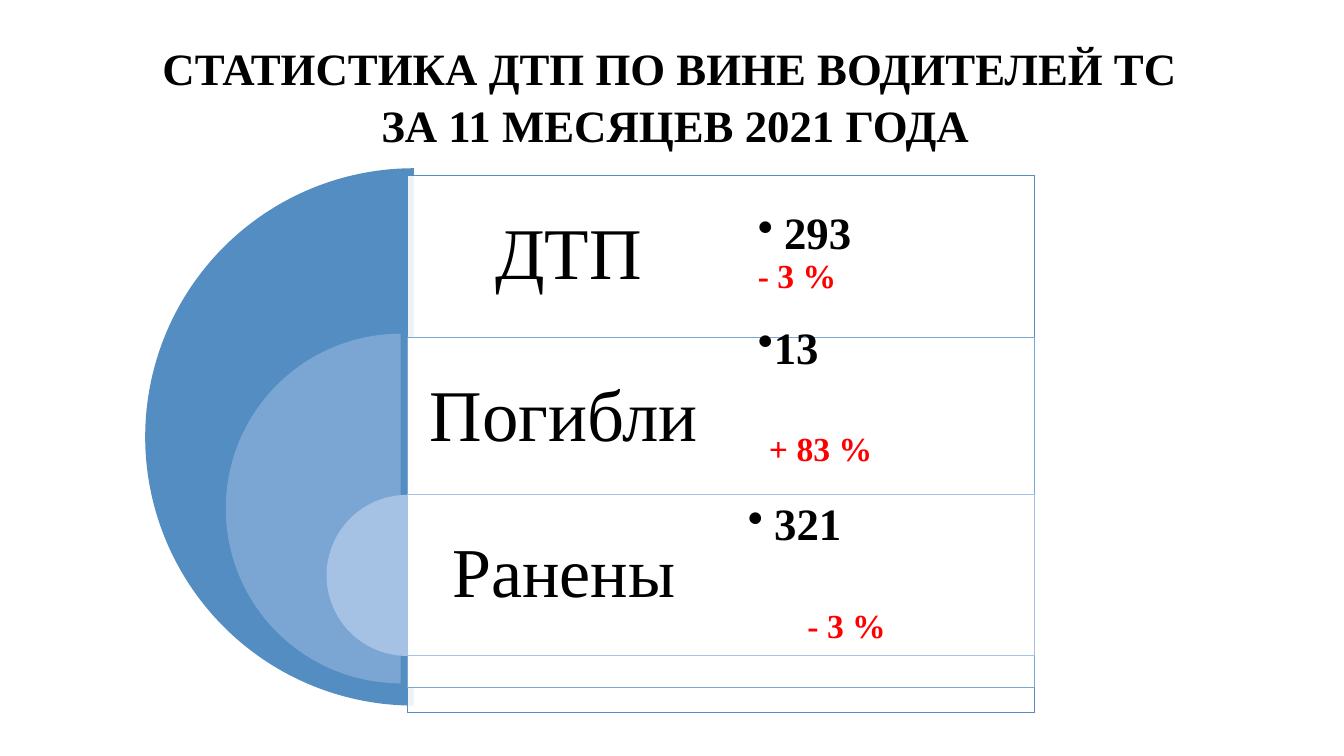
from lxml import etree
from pptx import Presentation, util as u
from pptx.dml.color import RGBColor
from pptx.enum import shapes, text
from pptx.oxml.ns import qn

FONT = "Times New Roman"
BLACK = RGBColor(0, 0, 0)
RED = RGBColor(0xFF, 0, 0)
WHITE = RGBColor(0xFF, 0xFF, 0xFF)
BLUE = RGBColor(0x53, 0x8D, 0xC1)
MID_BLUE = RGBColor(0x7B, 0xA6, 0xD3)
PALE_BLUE = RGBColor(0xA5, 0xC1, 0xE3)

TITLE = ["СТАТИСТИКА ДТП ПО ВИНЕ ВОДИТЕЛЕЙ ТС ", "ЗА 11 МЕСЯЦЕВ 2021 ГОДА"]

# Lengths in cm. pie and panel: (left, top) and top; both share one size.
# value: text, bullet position, text position; change: text, position, gap in pt.
ROWS = [
    dict(label="ДТП", label_size=52, label_indent=0.23, color=BLUE, size=13.54,
         pie=(3.66, 4.24), panel=4.42, value=("293", 0.25, 0.91),
         change=("- 3 %", 0.25, 0), bottom=0.95),
    dict(label="Погибли", label_size=52, label_indent=0, color=MID_BLUE, size=8.81,
         pie=(5.69, 8.41), panel=8.51, value=("13", 0.25, 0.65),
         change=("+ 83 %", 0.53, 42), bottom=0.64),
    dict(label="Ранены", label_size=50, label_indent=0, color=PALE_BLUE, size=4.06,
         pie=(8.23, 12.47), panel=12.45, value=("321", 0, 0.66),
         change=("- 3 %", 1.5, 42), bottom=0.25),
]
PANEL_LEFT, PANEL_WIDTH, ROW_HEIGHT = 10.26, 15.8, 4.06
COLUMN_WIDTH = PANEL_WIDTH / 2
VALUES_TOP = 4.34
VALUE_INSET = 0.69


def add_box(slide, left, top, width, height, anchor):
    box = slide.shapes.add_textbox(u.Cm(left), u.Cm(top), u.Cm(width), u.Cm(height))
    box.text_frame.word_wrap = True
    box.text_frame.vertical_anchor = anchor
    return box.text_frame


def set_font(paragraph, size, color=BLACK, bold=False):
    paragraph.font.name = FONT
    paragraph.font.size = u.Pt(size)
    paragraph.font.color.rgb = color
    paragraph.font.bold = bold


def set_indent(paragraph, left, first=0, bullet=False):
    properties = paragraph._p.get_or_add_pPr()
    properties.set("marL", str(u.Cm(left)))
    properties.set("indent", str(u.Cm(first)))
    if bullet:
        etree.SubElement(properties, qn("a:buChar")).set("char", "•")


def add_shape(slide, kind, left, top, width, height, fill):
    shape = slide.shapes.add_shape(
        kind, u.Cm(left), u.Cm(top), u.Cm(width), u.Cm(height))
    shape.shadow.inherit = False
    shape.fill.solid()
    shape.fill.fore_color.rgb = fill
    return shape


def add_title(slide):
    frame = add_box(slide, 0.18, 0.84, 33.68, 3, text.MSO_ANCHOR.TOP)
    for index, line in enumerate(TITLE):
        paragraph = frame.paragraphs[0] if index == 0 else frame.add_paragraph()
        paragraph.text = line
        paragraph.alignment = text.PP_ALIGN.CENTER
        paragraph.line_spacing = 1.05
        set_font(paragraph, 32, bold=True)


def add_panel(slide, row):
    """Half disc, translucent frame and row label."""
    size, color = row["size"], row["color"]
    pie = add_shape(slide, shapes.MSO_SHAPE.PIE, *row["pie"], size, size, color)
    pie.adjustments[0], pie.adjustments[1] = 54, 162
    pie.line.fill.background()

    panel = add_shape(slide, shapes.MSO_SHAPE.RECTANGLE, PANEL_LEFT, row["panel"],
                      PANEL_WIDTH, size, WHITE)
    fill_color = panel._element.spPr.find(qn("a:solidFill"))[0]
    etree.SubElement(fill_color, qn("a:alpha")).set("val", "90000")
    panel.line.color.rgb = color
    panel.line.width = u.Pt(0.5)

    frame = add_box(slide, PANEL_LEFT, row["panel"], COLUMN_WIDTH, ROW_HEIGHT,
                    text.MSO_ANCHOR.MIDDLE)
    frame.margin_left = frame.margin_right = u.Cm(0.55)
    label = frame.paragraphs[0]
    label.text = row["label"]
    label.alignment = text.PP_ALIGN.CENTER
    label.line_spacing = 0.9
    set_indent(label, row["label_indent"])
    set_font(label, row["label_size"])


def add_values(slide, row, top):
    """Bulleted count with its percentage change below."""
    frame = add_box(slide, PANEL_LEFT + COLUMN_WIDTH, top, COLUMN_WIDTH, ROW_HEIGHT,
                    text.MSO_ANCHOR.BOTTOM)
    frame.margin_left = frame.margin_right = u.Cm(VALUE_INSET)
    frame.margin_top, frame.margin_bottom = 0, u.Cm(row["bottom"])

    value, bullet_left, value_left = row["value"]
    count = frame.paragraphs[0]
    count.text = value
    count.line_spacing = 0.9
    set_indent(count, value_left, bullet_left - value_left, bullet=True)
    set_font(count, 32, bold=True)

    percent, percent_left, gap = row["change"]
    change = frame.add_paragraph()
    change.text = percent
    change.line_spacing = 0.9
    change.space_before = u.Pt(gap)
    set_indent(change, percent_left)
    set_font(change, 24, RED, bold=True)


def main():
    presentation = Presentation()
    presentation.slide_width, presentation.slide_height = u.Cm(33.87), u.Cm(19.05)
    slide = presentation.slides.add_slide(presentation.slide_layouts[6])
    add_title(slide)
    for row in ROWS:
        add_panel(slide, row)
    for index, row in enumerate(ROWS):
        add_values(slide, row, VALUES_TOP + index * ROW_HEIGHT)
    presentation.save("out.pptx")


if __name__ == "__main__":
    main()
